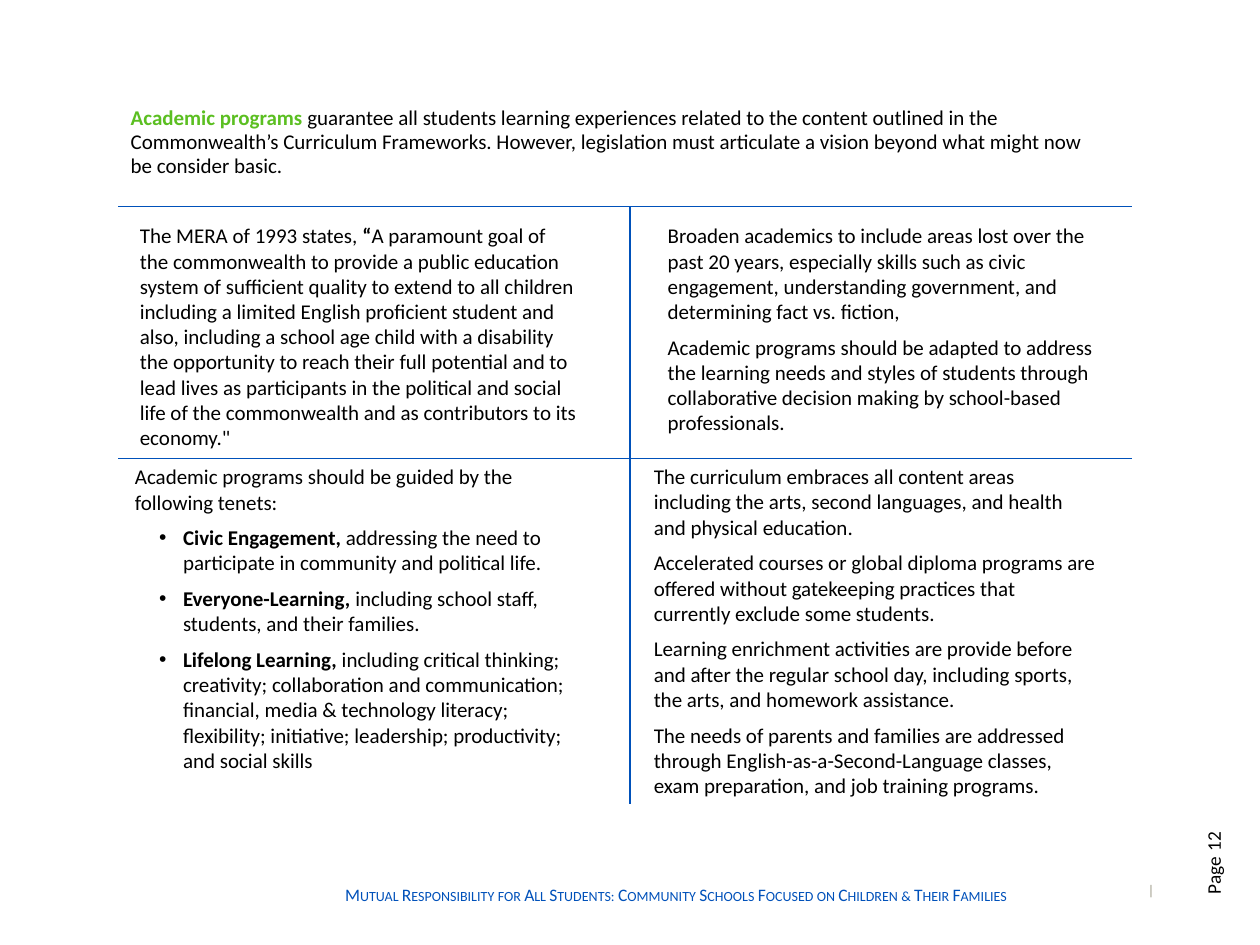
from pptx import Presentation
from pptx.dml.color import RGBColor
from pptx.enum.shapes import MSO_CONNECTOR
from pptx.enum.text import MSO_ANCHOR, MSO_AUTO_SIZE, PP_ALIGN
from pptx.oxml.ns import qn
from pptx.util import Cm, Pt
from lxml import etree

LEFT, RIGHT = PP_ALIGN.LEFT, PP_ALIGN.RIGHT
TOP, FIXED = MSO_ANCHOR.TOP, MSO_AUTO_SIZE.NONE
STRAIGHT = MSO_CONNECTOR.STRAIGHT

BLACK = RGBColor(0, 0, 0)
BLUE = RGBColor(0x00, 0x51, 0xBA)
GREEN = RGBColor(0x5B, 0xBF, 0x21)
GRAY = RGBColor(0xA6, 0xA6, 0xA6)
TAUPE = RGBColor(0x99, 0x96, 0x83)
FONT = "Calibri"

# A paragraph is a list of runs: (text, format changes)
BOLD = {"bold": True}
INTRO = [[
    ("Academic programs ", {"bold": True, "color": GREEN}),
    ("guarantee all students learning experiences related to the content "
     "outlined in the Commonwealth’s Curriculum Frameworks. However, legislation "
     "must articulate a vision beyond what might now be consider basic.", {}),
]]
MERA = [[
    ("The MERA of 1993 states, ", {}),
    ("“", BOLD),
    ("A paramount goal of the commonwealth to provide a public education system "
     "of sufficient quality to extend to all children including a limited English "
     "proficient student and also, including a school age child with a disability "
     "the opportunity to reach their full potential and to lead lives as "
     "participants in the political and social life of the commonwealth and as "
     "contributors to its economy.\"", {}),
]]
BROADEN = [
    [("Broaden academics to include areas lost over the past 20 years, especially "
      "skills such as civic engagement, understanding government, and determining "
      "fact vs. fiction,", {})],
    [("Academic programs should be adapted to address the learning needs and "
      "styles of students through collaborative decision making by school-based "
      "professionals.", {})],
]
TENETS = [
    [("Academic programs should be guided by the following tenets:", {})],
    [("Civic Engagement, ", BOLD),
     ("addressing the need to participate in community and political life.", {})],
    [("Everyone-Learning, ", BOLD),
     ("including school staff, students, and their families.", {})],
    [("Lifelong Learning, ", BOLD),
     ("including critical thinking; creativity; collaboration and communication; "
      "financial, media & technology literacy; flexibility; initiative; "
      "leadership; productivity; and social skills", {})],
]
OFFER = [
    [("The curriculum embraces all content areas including the arts, second "
      "languages, and health and physical education.", {})],
    [("Accelerated courses or global diploma programs are offered without "
      "gatekeeping practices that currently exclude some students.", {})],
    [("Learning enrichment activities are provide before and after the regular "
      "school day, including sports, the arts, and homework assistance.", {})],
    [("The needs of parents and families are addressed through "
      "English-as-a-Second-Language classes, exam preparation, and job training "
      "programs.", {})],
]
FOOTER = [[("Mutual Responsibility for All Students: Community Schools Focused on "
            "Children & Their Families", {"size": 10, "color": BLUE})]]
PAGE = [[("Page", {"size": 11}), (" ", {"size": 14, "color": GRAY}),
         ("12", {"size": 11})]]
BAR = [[("|", {"size": 8, "color": TAUPE})]]

# Grid, in cm
X0, XMID, X1 = 2.38, 12.7, 22.83
Y0, YMID, Y1 = 4.16, 9.24, 16.21
COL, UPPER, LOWER = 2.57, 4.37, 9.35
RULES = [(X0, YMID, X1, YMID), (XMID, Y0, XMID, Y1), (X0, Y0, X1, Y0)]


def style(run, size=12, color=BLACK, bold=False):
    font = run.font
    font.name, font.size, font.bold = FONT, Pt(size), bold
    font.color.rgb = color


def indent(para, left, first=0, mark=None):
    """Set the indents in cm, and the bullet or its absence."""
    props = para._p.get_or_add_pPr()
    props.set("marL", str(Cm(left)))
    props.set("indent", str(Cm(first)))
    if mark:
        etree.SubElement(props, qn("a:buFont")).set("typeface", "Arial")
        etree.SubElement(props, qn("a:buChar")).set("char", mark)
    else:
        etree.SubElement(props, qn("a:buNone"))


def write(shape, box, paras, left=0, inset=True, align=LEFT, after=0,
          lead=1.0, bullets=False, wrap=True):
    """Place a text shape by its box in cm and fill in its paragraphs."""
    shape.left, shape.top, shape.width, shape.height = map(Cm, box)
    frame = shape.text_frame
    frame.word_wrap, frame.auto_size = wrap, FIXED
    frame.vertical_anchor = TOP
    if not inset:
        frame.margin_left = frame.margin_right = 0
        frame.margin_top = frame.margin_bottom = 0
    for i, runs in enumerate(paras):
        para = frame.add_paragraph() if i else frame.paragraphs[0]
        if bullets and i:
            indent(para, 1.12, -0.48, "•")
        else:
            indent(para, left)
        para.alignment, para.line_spacing = align, lead
        para.space_before, para.space_after = Pt(0), Pt(after)
        for text, look in runs:
            run = para.add_run()
            run.text = text
            style(run, **look)
    return shape


def main():
    deck = Presentation()
    deck.slide_width, deck.slide_height = Cm(25.4), Cm(19.05)
    slide = deck.slides.add_slide(deck.slide_layouts[1])
    shapes = slide.shapes

    def label(box, paras, **opts):
        return write(shapes.add_textbox(0, 0, 0, 0), box, paras, **opts)

    write(shapes.title, (X0, 2.01, 20.12, 1.47), INTRO, lead=0.95)
    write(slide.placeholders[1], (COL, LOWER, 9.32, 7.26), TENETS,
          left=0.15, inset=False, after=6, bullets=True)
    label((COL, UPPER, 9.32, 4.88), MERA)
    label((13.18, UPPER, 9.32, 4.44), BROADEN, left=0.03, after=6)
    label((13.15, LOWER, 8.94, 7.42), OFFER, left=0.03, inset=False, after=6)

    foot = label((6.71, 17.74, 18.3, 1.14), FOOTER, lead=0.9)
    foot.text_frame.paragraphs[0].runs[0].font._element.set("cap", "small")
    page = label((23.75, 17.14, 1.35, 0.61), PAGE, inset=False, align=RIGHT,
                 wrap=False)
    page.rotation = 270
    label((23.19, 17.78, 0.08, 0.33), BAR, inset=False, align=RIGHT, wrap=False)

    for ends in RULES:
        rule = shapes.add_connector(STRAIGHT, *map(Cm, ends))
        rule.line.color.rgb, rule.line.width = BLUE, Pt(0.75)
        etree.SubElement(rule._element.spPr, qn("a:effectLst"))

    deck.save("out.pptx")


if __name__ == "__main__":
    main()
